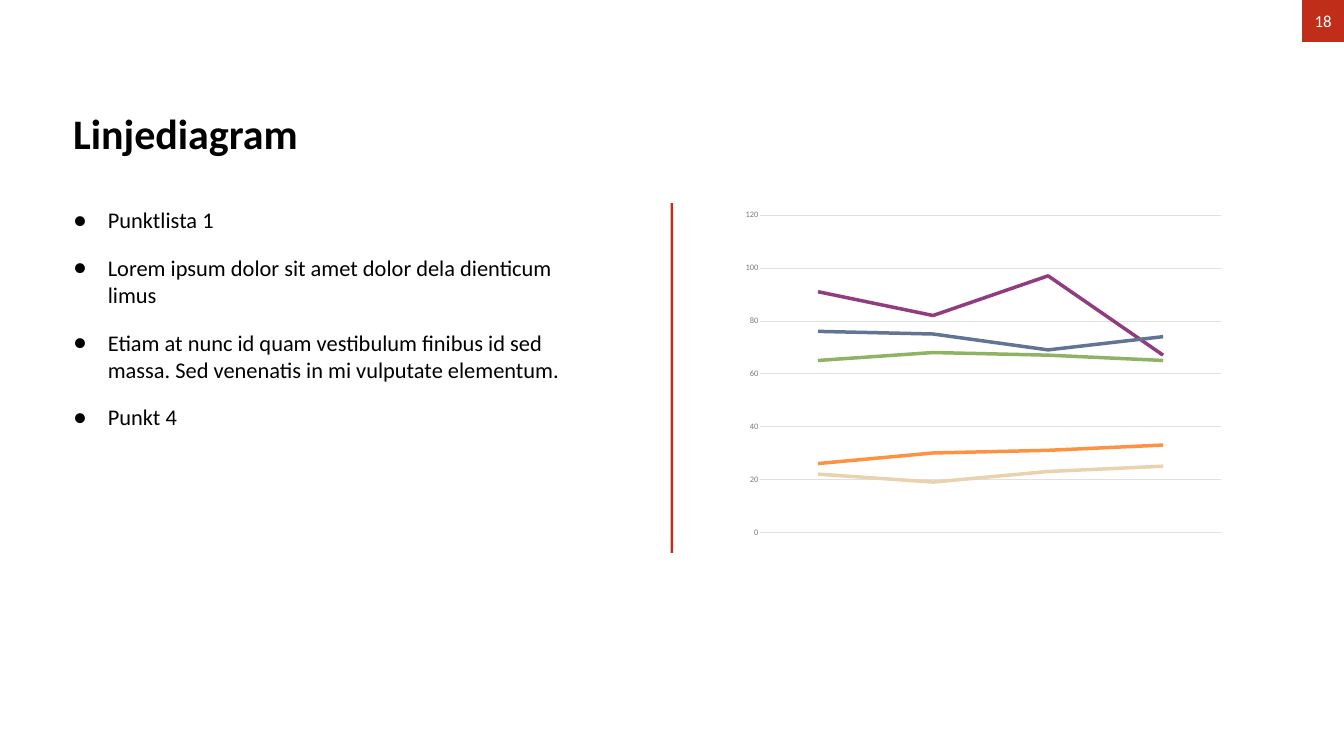
from dataclasses import dataclass

from lxml.etree import SubElement
from pptx import Presentation
from pptx.chart.data import CategoryChartData
from pptx.dml.color import RGBColor
from pptx.enum.chart import XL_CHART_TYPE as ChartType
from pptx.enum.chart import XL_MARKER_STYLE as Marker
from pptx.enum.chart import XL_TICK_MARK as Tick
from pptx.enum.shapes import MSO_SHAPE as Preset
from pptx.enum.text import MSO_ANCHOR as Anchor
from pptx.enum.text import PP_ALIGN as Align
from pptx.oxml.ns import qn
from pptx.slide import Slide
from pptx.text.text import Font, TextFrame, _Paragraph as Paragraph
from pptx.util import Inches, Pt


@dataclass(frozen=True)
class Theme:
    font: str = "Calibri"
    accent: str = "C02D18"
    ink: str = "000000"
    paper: str = "FFFFFF"
    axis: str = "7A7A7A"
    grid: str = "E0E0E0"
    title_size: int = 60
    body_size: int = 32
    number_size: int = 24
    axis_size: int = 12
    bullet_gap: int = 30
    line_width: int = 5


@dataclass(frozen=True)
class Box:
    left: float
    top: float
    width: float
    height: float

    def lengths(self) -> tuple:
        return tuple(Inches(v) for v in (self.left, self.top, self.width, self.height))


@dataclass(frozen=True)
class Series:
    name: str
    values: tuple
    color: str


THEME = Theme()
MARGIN, CONTENT_TOP, CONTENT_HEIGHT = 1.39, 4.03, 6.77
POINTS = (
    "Punktlista 1",
    "Lorem ipsum dolor sit amet dolor dela dienticum limus",
    "Etiam at nunc id quam vestibulum finibus id sed massa. "
    "Sed venenatis in mi vulputate elementum.",
    "Punkt 4",
)
CATEGORIES = ("1", "2", "3", "4")
SERIES = (
    Series("Series 1", (91, 82, 97, 67), "903C7E"),
    Series("Series 2", (76, 75, 69, 74), "617493"),
    Series("Series 3", (22, 19, 23, 25), "E9D3AE"),
    Series("Series 4", (26, 30, 31, 33), "FF9140"),
    Series("Series 5", (65, 68, 67, 65), "8FB365"),
)
PLOT_AREA = {"x": 0.05, "y": 0.035, "w": 0.93, "h": 0.93}


def rgb(color: str) -> RGBColor:
    return RGBColor.from_string(color)


def style(font: Font, size: int, color: str, bold: bool = False) -> None:
    font.name = THEME.font
    font.size = Pt(size)
    font.bold = bold
    font.color.rgb = rgb(color)


def style_runs(paragraph: Paragraph, size: int, color: str, bold: bool = False) -> None:
    for run in paragraph.runs:
        style(run.font, size, color, bold)


def add_block(slide: Slide, box: Box) -> TextFrame:
    block = slide.shapes.add_shape(Preset.RECTANGLE, *box.lengths())
    block.shadow.inherit = False
    block.fill.solid()
    block.fill.fore_color.rgb = rgb(THEME.accent)
    block.line.fill.background()
    return block.text_frame


def add_text(slide: Slide, box: Box, anchor: Anchor) -> TextFrame:
    frame = slide.shapes.add_textbox(*box.lengths()).text_frame
    frame.word_wrap = True
    frame.vertical_anchor = anchor
    frame.margin_left = frame.margin_right = Inches(0.06)
    frame.margin_top = frame.margin_bottom = Inches(0.06)
    return frame


def add_bullet(paragraph: Paragraph) -> None:
    props = paragraph._p.get_or_add_pPr()
    indent = Inches(0.69)
    props.set("marL", str(indent))
    props.set("indent", str(-indent))
    SubElement(props, qn("a:buSzPct"), val="125000")
    SubElement(props, qn("a:buFont"), typeface=THEME.font)
    SubElement(props, qn("a:buChar"), char="•")


def add_title(slide: Slide, title: str) -> None:
    frame = add_text(slide, Box(MARGIN, 0.69, 22.97, 2.5), Anchor.BOTTOM)
    frame.text = title
    style_runs(frame.paragraphs[0], THEME.title_size, THEME.ink, bold=True)


def add_page_number(slide: Slide, number: str) -> None:
    frame = add_block(slide, Box(25.84, 0, 0.83, 0.83))
    frame.text = number
    frame.vertical_anchor = Anchor.MIDDLE
    frame.paragraphs[0].alignment = Align.CENTER
    style_runs(frame.paragraphs[0], THEME.number_size, THEME.paper)


def add_points(slide: Slide, points: tuple) -> None:
    frame = add_text(slide, Box(MARGIN, CONTENT_TOP, 10.67, CONTENT_HEIGHT), Anchor.TOP)
    frame.text = "\n".join(points)
    for position, paragraph in enumerate(frame.paragraphs):
        add_bullet(paragraph)
        if position:
            paragraph.space_before = Pt(THEME.bullet_gap)
        style_runs(paragraph, THEME.body_size, THEME.ink)


def add_line_chart(slide: Slide, series: tuple) -> None:
    data = CategoryChartData()
    data.categories = CATEGORIES
    for entry in series:
        data.add_series(entry.name, entry.values)
    box = Box(14.6, CONTENT_TOP, 9.82, CONTENT_HEIGHT)
    chart = slide.shapes.add_chart(ChartType.LINE, *box.lengths(), data).chart
    chart.has_legend = False
    chart.has_title = False
    style(chart.font, THEME.axis_size, THEME.axis)
    chart.category_axis.visible = False

    scale = chart.value_axis
    scale.minimum_scale, scale.maximum_scale, scale.major_unit = 0, 120, 20
    scale.major_tick_mark = scale.minor_tick_mark = Tick.NONE
    scale.format.line.fill.background()
    scale.major_gridlines.format.line.color.rgb = rgb(THEME.grid)
    scale.major_gridlines.format.line.width = Pt(0.75)
    style(scale.tick_labels.font, THEME.axis_size, THEME.axis)

    plot = chart.plots[0]
    plot.vary_by_categories = False
    for line, entry in zip(plot.series, series):
        line.smooth = False
        line.marker.style = Marker.NONE
        line.format.line.color.rgb = rgb(entry.color)
        line.format.line.width = Pt(THEME.line_width)

    area = chart._chartSpace.chart.plotArea
    for previous in area.findall(qn("c:layout")):
        area.remove(previous)
    layout = SubElement(area, qn("c:layout"))
    area.insert(0, layout)
    manual = SubElement(layout, qn("c:manualLayout"))
    SubElement(manual, qn("c:layoutTarget"), val="inner")
    for axis in ("x", "y"):
        SubElement(manual, qn(f"c:{axis}Mode"), val="edge")
    for side, share in PLOT_AREA.items():
        SubElement(manual, qn(f"c:{side}"), val=str(share))


def main() -> None:
    deck = Presentation()
    deck.slide_width, deck.slide_height = Inches(26.67), Inches(15)
    slide = deck.slides.add_slide(deck.slide_layouts[6])
    add_block(slide, Box(13.31, CONTENT_TOP, 0.05, 6.94))
    add_title(slide, "Linjediagram")
    add_page_number(slide, "18")
    add_points(slide, POINTS)
    add_line_chart(slide, SERIES)
    deck.save("out.pptx")


if __name__ == "__main__":
    main()
